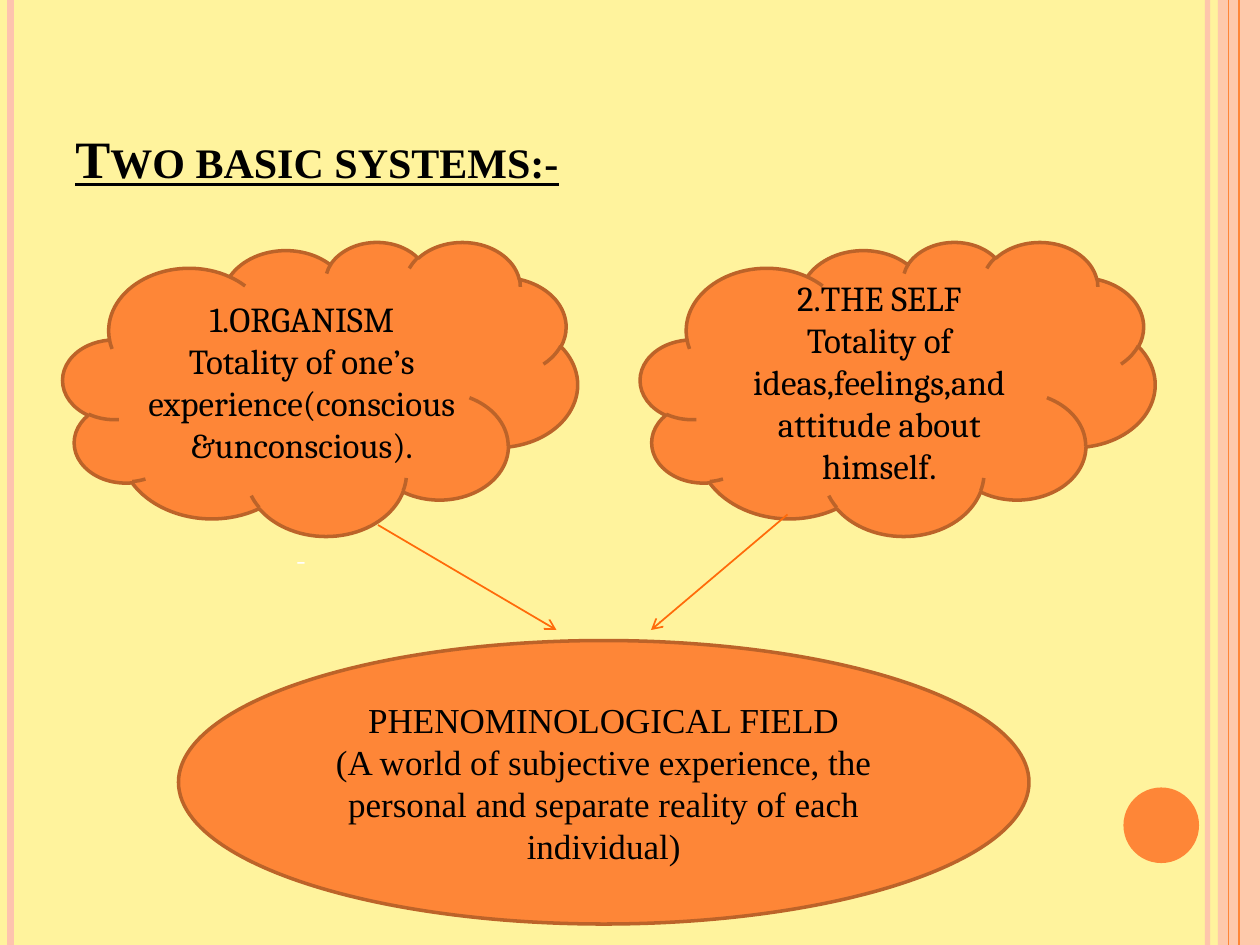
from lxml import etree
from pptx import Presentation
from pptx.dml.color import RGBColor
from pptx.enum import shapes, text
from pptx.oxml import ns
from pptx.util import Pt

W, H = 720, 540
ORANGE, PEACH, BROWN = "FE8637", "FEC3AE", "BC6329"
KIND = shapes.MSO_SHAPE


def hue(code):
    return RGBColor.from_string(code)


def sub(node, tag, **attrs):
    return etree.SubElement(node, ns.qn(tag), **attrs)


class Deck:
    body = {"size": Pt(20), "name": "Cambria"}
    head = {"size": Pt(30), "name": "Times New Roman",
            "bold": True, "underline": True}

    def __init__(self):
        self.prs = Presentation()
        self.prs.slide_width, self.prs.slide_height = Pt(W), Pt(H)
        self.slide = self.prs.slides.add_slide(self.prs.slide_layouts[6])

    def ground(self, color):
        fill = self.slide.background.fill
        fill.solid()
        fill.fore_color.rgb = hue(color)

    def fade(self, node, alpha):
        """Make the first solid color under node see-through, in percent."""
        color = node.find(".//" + ns.qn("a:srgbClr"))
        sub(color, "a:alpha", val=str(alpha * 1000))

    def words(self, frame, lines, style, color="000000", align="CENTER"):
        frame.word_wrap = True
        for i, line in enumerate(lines):
            para = frame.paragraphs[0] if i == 0 else frame.add_paragraph()
            para.alignment = getattr(text.PP_ALIGN, align)
            run = para.add_run()
            run.text = line
            for key, val in style.items():
                setattr(run.font, key, val)
            run.font.color.rgb = hue(color)

    def shape(self, kind, box, lines=(), edge=None, alpha=None, **style):
        item = self.slide.shapes.add_shape(kind, *map(Pt, box))
        item.shadow.inherit = False
        item.fill.solid()
        item.fill.fore_color.rgb = hue(PEACH if alpha else ORANGE)
        if alpha:
            self.fade(item._element.spPr, alpha)
        if edge:
            item.line.color.rgb = hue(edge)
            item.line.width = Pt(2)
        else:
            item.line.fill.background()
        item.text_frame.vertical_anchor = text.MSO_ANCHOR.MIDDLE
        self.words(item.text_frame, lines, {**self.body, **style})

    def label(self, box, line, style, color="000000", align="LEFT",
              anchor="TOP"):
        frame = self.slide.shapes.add_textbox(*map(Pt, box)).text_frame
        frame.vertical_anchor = getattr(text.MSO_ANCHOR, anchor)
        self.words(frame, [line], style, color, align)
        return frame.paragraphs[0].runs[0]

    def title(self, box, line):
        run = self.label(box, line, self.head, anchor="BOTTOM")
        run._r.get_or_add_rPr().set("cap", "small")

    def line(self, ends, color, width, alpha=None, arrow=False):
        item = self.slide.shapes.add_connector(
            shapes.MSO_CONNECTOR.STRAIGHT, *map(Pt, ends))
        item.line.color.rgb = hue(color)
        item.line.width = Pt(width)
        props = item._element.spPr
        if alpha:
            self.fade(props, alpha)
        if arrow:
            sub(props.find(ns.qn("a:ln")), "a:tailEnd", type="arrow")
        sub(props, "a:effectLst")


def main():
    deck = Deck()
    deck.ground("FFF39D")

    # Side rails and corner dot
    deck.shape(KIND.RECTANGLE, (696, 0, 24, H), alpha=87)
    for x, color, width, alpha in [(690, PEACH, 3, 93), (6, PEACH, 4.5, None),
                                   (708, ORANGE, 1.5, None),
                                   (702, ORANGE, 0.75, None)]:
        deck.line((x, 0, x, H), color, width, alpha)
    deck.shape(KIND.OVAL, (642, 450, 43.2, 43.2))

    # Title
    deck.title((36, 21.6, 588, 90), "Two basic systems:-")

    # The two systems
    systems = [
        ("1.ORGANISM",
         "Totality of one’s experience(conscious &unconscious)."),
        ("2.THE SELF",
         "Totality of ideas,feelings,and attitude about himself."),
    ]
    for i, lines in enumerate(systems):
        deck.shape(KIND.CLOUD, (36 + 330 * i, 138, 294, 168), lines, BROWN)
    deck.label((152, 305, 40, 28), "-", {"size": Pt(18), "name": "Cambria"},
               "FFFFFF", "CENTER")

    # Arrows down to the shared field
    for ends in [(216, 300, 318, 360), (450, 294, 372, 360)]:
        deck.line(ends, "FF6B0A", 1, arrow=True)
    deck.shape(KIND.OVAL, (102, 366, 486, 162),
               ["PHENOMINOLOGICAL FIELD",
                "(A world of subjective experience, the personal and "
                "separate reality of each individual)"],
               BROWN, name="Times New Roman")

    deck.prs.save("out.pptx")


if __name__ == "__main__":
    main()
